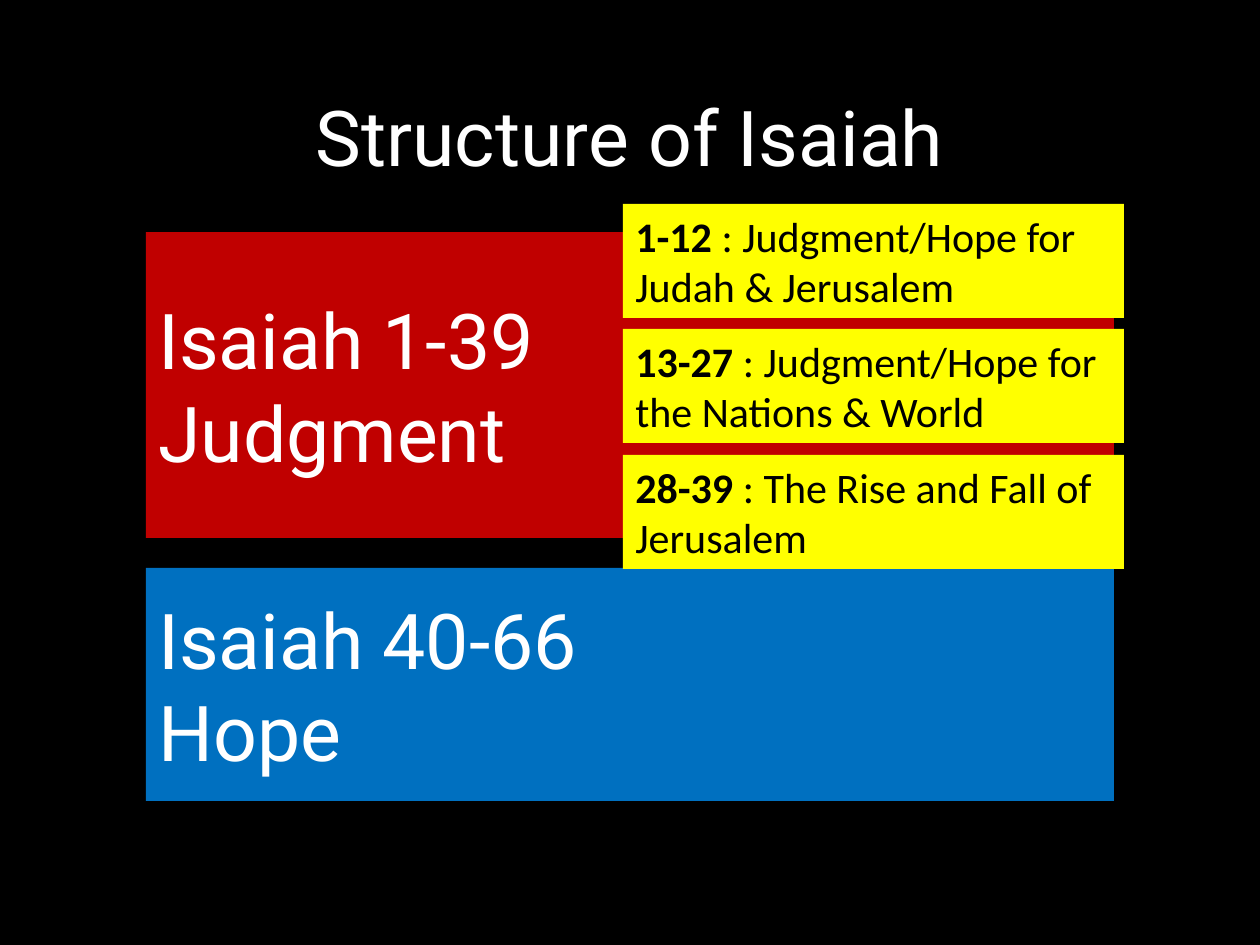
"""Build a slide that shows the structure of Isaiah."""
import pptx
import pptx.dml.color
import pptx.enum.shapes
import pptx.enum.text
import pptx.util

RGB = pptx.dml.color.RGBColor
BLACK = RGB(0, 0, 0)
WHITE = RGB(255, 255, 255)
RED = RGB(192, 0, 0)
BLUE = RGB(0, 112, 192)
YELLOW = RGB(255, 255, 0)
SCALE = pptx.util.Inches(1) / 126
ALIGN = pptx.enum.text.PP_ALIGN
ANCHOR = pptx.enum.text.MSO_ANCHOR


class Deck:
    def __init__(self, wide, high):
        self.show = pptx.Presentation()
        self.show.slide_width, self.show.slide_height = self.scale(wide, high)
        self.slide = self.show.slides.add_slide(self.show.slide_layouts[6])
        back = self.slide.background.fill
        back.solid()
        back.fore_color.rgb = BLACK
        self.large = ("Roboto", 44, WHITE)
        self.small = ("Calibri", 24, BLACK)

    def scale(self, *sizes):
        return [round(size * SCALE) for size in sizes]

    def style(self, frame, look, align):
        face, size, color = look
        for para in frame.paragraphs:
            para.alignment = align
            for run in para.runs:
                run.font.name = face
                run.font.size = pptx.util.Pt(size)
                run.font.color.rgb = color

    def title(self, text, *box):
        frame = self.slide.shapes.add_textbox(*self.scale(*box)).text_frame
        frame.word_wrap = True
        frame.vertical_anchor = ANCHOR.MIDDLE
        frame.text = text
        frame.paragraphs[0].line_spacing = 0.9
        self.style(frame, self.large, ALIGN.CENTER)

    def block(self, fill, *box):
        kind = pptx.enum.shapes.MSO_SHAPE.RECTANGLE
        shape = self.slide.shapes.add_shape(kind, *self.scale(*box))
        shape.shadow.inherit = False
        shape.fill.solid()
        shape.fill.fore_color.rgb = fill
        shape.line.fill.background()
        shape.text_frame.word_wrap = True
        return shape.text_frame

    def panel(self, text, fill, *box):
        frame = self.block(fill, *box)
        frame.vertical_anchor = ANCHOR.MIDDLE
        frame.text = text
        self.style(frame, self.large, ALIGN.LEFT)

    def note(self, verses, theme, *box):
        frame = self.block(YELLOW, *box)
        frame.vertical_anchor = ANCHOR.TOP
        frame.auto_size = pptx.enum.text.MSO_AUTO_SIZE.SHAPE_TO_FIT_TEXT
        frame.text = verses
        para = frame.paragraphs[0]
        para.runs[0].font.bold = True
        para.add_run().text = f" : {theme}"
        self.style(frame, self.small, ALIGN.LEFT)


def main():
    deck = Deck(1260, 945)
    deck.title("Structure of Isaiah", 87, 50, 1086, 183)
    deck.panel("Isaiah 1-39\nJudgment", RED, 146, 232, 968, 306)
    deck.panel("Isaiah 40-66\nHope", BLUE, 146, 568, 968, 233)
    notes = [
        ("1-12", "Judgment/Hope for Judah & Jerusalem"),
        ("13-27", "Judgment/Hope for the Nations & World"),
        ("28-39", "The Rise and Fall of Jerusalem"),
    ]
    for row, (verses, theme) in enumerate(notes):
        deck.note(verses, theme, 623, 204 + 251 * row // 2, 501, 114)
    deck.show.save("out.pptx")


if __name__ == "__main__":
    main()
